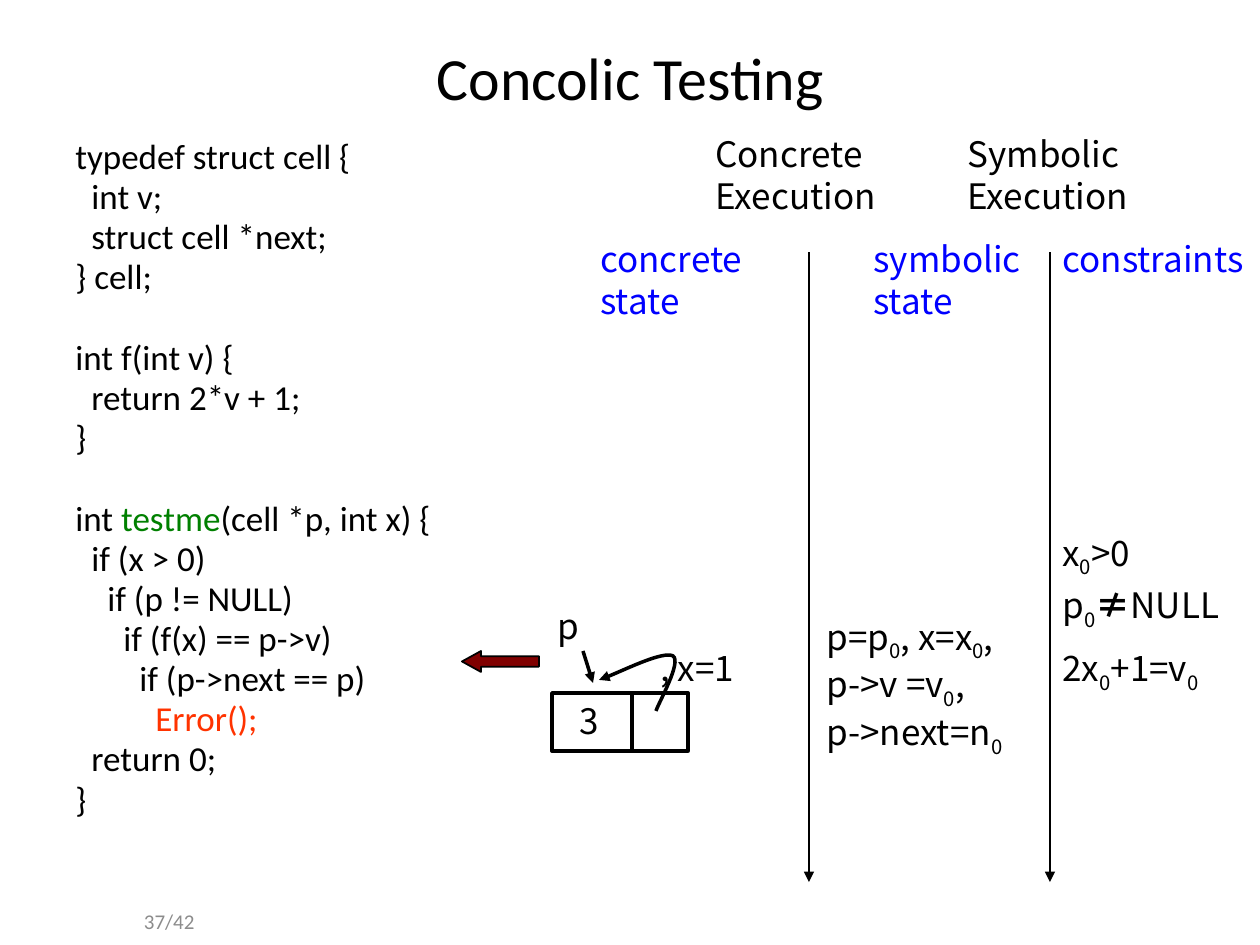
from dataclasses import dataclass

from pptx import Presentation
from pptx.dml.color import RGBColor
from pptx.enum.shapes import MSO_CONNECTOR, MSO_SHAPE
from pptx.enum.text import MSO_ANCHOR, PP_ALIGN
from pptx.oxml import parse_xml
from pptx.oxml.ns import nsdecls, qn
from pptx.util import Pt

PX = 914400 / 126  # EMU in one px
TITLE_ONLY = 5


@dataclass(frozen=True)
class Theme:
    code_font: str = "Calibri"
    note_font: str = "Noto Sans CJK KR"
    title_size: float = 34.2
    text_size: float = 20
    number_size: float = 12
    black: str = "000000"
    blue: str = "0000FF"
    green: str = "008000"
    red: str = "FF3300"
    maroon: str = "800000"
    grey: str = "8C8C8C"


THEME = Theme()

# Code lines: indent level, then (text, colour) runs; None is a gap
CODE = [
    (0, [("typedef struct cell {", THEME.black)]),
    (1, [("int v;", THEME.black)]),
    (1, [("struct cell *next;", THEME.black)]),
    (0, [("} cell;", THEME.black)]),
    None,
    (0, [("int f(int v) {", THEME.black)]),
    (1, [("return 2*v + 1;", THEME.black)]),
    (0, [("}", THEME.black)]),
    None,
    (0, [("int ", THEME.black), ("testme", THEME.green),
         ("(cell *p, int x) {", THEME.black)]),
    (1, [("if (x > 0)", THEME.black)]),
    (2, [("if (p != NULL)", THEME.black)]),
    (3, [("if (f(x) == p->v)", THEME.black)]),
    (4, [("if (p->next == p)", THEME.black)]),
    (5, [("Error();", THEME.red)]),
    (1, [("return 0;", THEME.black)]),
    (0, [("}", THEME.black)]),
]

# Column headings: text, box, colour
HEADINGS = [
    ("Concrete Execution", (703, 126, 210, 97), THEME.black),
    ("Symbolic Execution", (955, 126, 210, 97), THEME.black),
    ("concrete state", (588, 231, 189, 97), THEME.blue),
    ("symbolic state", (861, 231, 189, 97), THEME.blue),
    ("constraints", (1050, 231, 210, 54), THEME.blue),
]

# Formulas: box, then lines of (text, style) runs
ZERO = ("0", "subscript")
FORMULAS = [
    ((1050, 525, 210, 54), [[("x", ""), ZERO, (">0", "")]]),
    ((1050, 577, 210, 54), [[("p", ""), ZERO, ("≠", "bold"), ("NULL", "")]]),
    ((1050, 640, 210, 54), [[("2x", ""), ZERO, ("+1=v", ""), ZERO]]),
    ((814, 609, 242, 139), [
        [("p=p", ""), ZERO, (", x=x", ""), ZERO, (",", "")],
        [("p->v =v", ""), ZERO, (",", "")],
        [("p->next=n", ""), ZERO],
    ]),
]

# Start point, then three points for each Bézier segment
NEXT_POINTER = [(656, 711), (659, 702), (682, 662), (673, 656),
                (663, 651), (614, 675), (599, 680)]


def emu(*lengths):
    return [round(length * PX) for length in lengths]


def style_run(run, font, size, color):
    run.font.name = font
    run.font.size = Pt(size)
    run.font.color.rgb = RGBColor.from_string(color)


def add_run(paragraph, text, font=THEME.note_font, color=THEME.black, style=""):
    run = paragraph.add_run()
    run.text = text
    style_run(run, font, THEME.text_size, color)
    if style == "subscript":
        run.font._element.set("baseline", "-25000")
    elif style == "bold":
        run.font.bold = True


def next_paragraph(frame, index):
    return frame.paragraphs[0] if index == 0 else frame.add_paragraph()


def indent(paragraph, distance):
    paragraph._p.get_or_add_pPr().set("marL", str(emu(distance)[0]))


def add_text_frame(slide, box):
    frame = slide.shapes.add_textbox(*emu(*box)).text_frame
    frame.word_wrap = True
    return frame


def add_arrowhead(shape):
    shape.line._get_or_add_ln().append(
        parse_xml(f'<a:tailEnd {nsdecls("a")} type="triangle"/>'))


def outline(shape, width):
    shape.line.color.rgb = RGBColor.from_string(THEME.black)
    shape.line.width = Pt(width)


def add_line(slide, start, end, width, arrow=True):
    line = slide.shapes.add_connector(
        MSO_CONNECTOR.STRAIGHT, *emu(*start), *emu(*end))
    outline(line, width)
    line._element.spPr.append(parse_xml(f'<a:effectLst {nsdecls("a")}/>'))
    if arrow:
        add_arrowhead(line)


def add_shape(slide, kind, box, width, fill=None):
    shape = slide.shapes.add_shape(kind, *emu(*box))
    shape.shadow.inherit = False
    outline(shape, width)
    if fill:
        shape.fill.solid()
        shape.fill.fore_color.rgb = RGBColor.from_string(fill)
    else:
        shape.fill.background()
    return shape


def add_curve(slide, points, width):
    builder = slide.shapes.build_freeform(*points[0], scale=PX)
    builder.add_line_segments(points[1:], close=False)
    curve = builder.convert_to_shape()
    # Each three line segments become one Bézier segment
    segments = list(curve._element.iter(qn("a:lnTo")))
    for first in range(0, len(segments), 3):
        bezier = parse_xml(f'<a:cubicBezTo {nsdecls("a")}/>')
        segments[first].addprevious(bezier)
        for segment in segments[first:first + 3]:
            bezier.append(segment[0])
            segment.getparent().remove(segment)
    curve.shadow.inherit = False
    curve.fill.background()
    outline(curve, width)
    add_arrowhead(curve)


def add_title(slide, text):
    title = slide.shapes.title
    title.left, title.top, title.width, title.height = emu(63, 38, 1134, 77)
    title.text_frame.text = text
    title.text_frame.vertical_anchor = MSO_ANCHOR.MIDDLE
    paragraph = title.text_frame.paragraphs[0]
    paragraph.alignment = PP_ALIGN.CENTER
    style_run(paragraph.runs[0], THEME.code_font, THEME.title_size, THEME.black)


def add_code(slide):
    frame = add_text_frame(slide, (63, 136, 557, 735))
    spacing, gap, count = 3.7, 0, 0
    for line in CODE:
        if line is None:
            gap = 23.2
            continue
        level, runs = line
        paragraph = next_paragraph(frame, count)
        paragraph.line_spacing = 0.8
        paragraph.space_before = Pt(spacing + gap)
        indent(paragraph, 16 * level)
        for text, color in runs:
            add_run(paragraph, text, THEME.code_font, color)
        gap, count = 0, count + 1


def add_formula(slide, box, lines):
    frame = add_text_frame(slide, box)
    for index, runs in enumerate(lines):
        paragraph = next_paragraph(frame, index)
        for text, style in runs:
            add_run(paragraph, text, style=style)


def add_memory_cell(slide):
    # Variables
    frame = add_text_frame(slide, (530, 598, 294, 97))
    for index, (text, distance) in enumerate([("p", 15), (", x=1", 118)]):
        paragraph = next_paragraph(frame, index)
        indent(paragraph, distance)
        add_run(paragraph, text)
    add_line(slide, (583, 651), (593, 683), 2)

    # Cell with its value and next pointer
    cell = add_shape(slide, MSO_SHAPE.RECTANGLE, (552, 693, 136, 58), 2)
    cell.text_frame.vertical_anchor = MSO_ANCHOR.TOP
    paragraph = cell.text_frame.paragraphs[0]
    paragraph.alignment = PP_ALIGN.LEFT
    indent(paragraph, 15)
    add_run(paragraph, "3")
    add_line(slide, (632, 752), (632, 693), 2, arrow=False)
    add_curve(slide, NEXT_POINTER, 2)


def add_page_number(slide, text):
    frame = add_text_frame(slide, (84, 896, 123, 50))
    frame.vertical_anchor = MSO_ANCHOR.MIDDLE
    frame.text = text
    frame.paragraphs[0].alignment = PP_ALIGN.RIGHT
    style_run(frame.paragraphs[0].runs[0], THEME.code_font,
              THEME.number_size, THEME.grey)


def main():
    presentation = Presentation()
    presentation.slide_width, presentation.slide_height = emu(1260, 945)
    slide = presentation.slides.add_slide(
        presentation.slide_layouts[TITLE_ONLY])
    add_page_number(slide, "37/42")
    add_title(slide, "Concolic Testing")
    add_code(slide)

    # Execution columns
    for x in (809, 1050):
        add_line(slide, (x, 252), (x, 882), 1.5)
    for text, box, color in HEADINGS:
        add_run(add_text_frame(slide, box).paragraphs[0], text, color=color)
    for box, lines in FORMULAS:
        add_formula(slide, box, lines)

    # Current program point and its state
    marker = add_shape(slide, MSO_SHAPE.LEFT_ARROW, (462, 651, 77, 21), 1,
                       THEME.maroon)
    marker.adjustments[0], marker.adjustments[1] = 0.5, 0.91
    add_memory_cell(slide)
    presentation.save("out.pptx")


if __name__ == "__main__":
    main()
